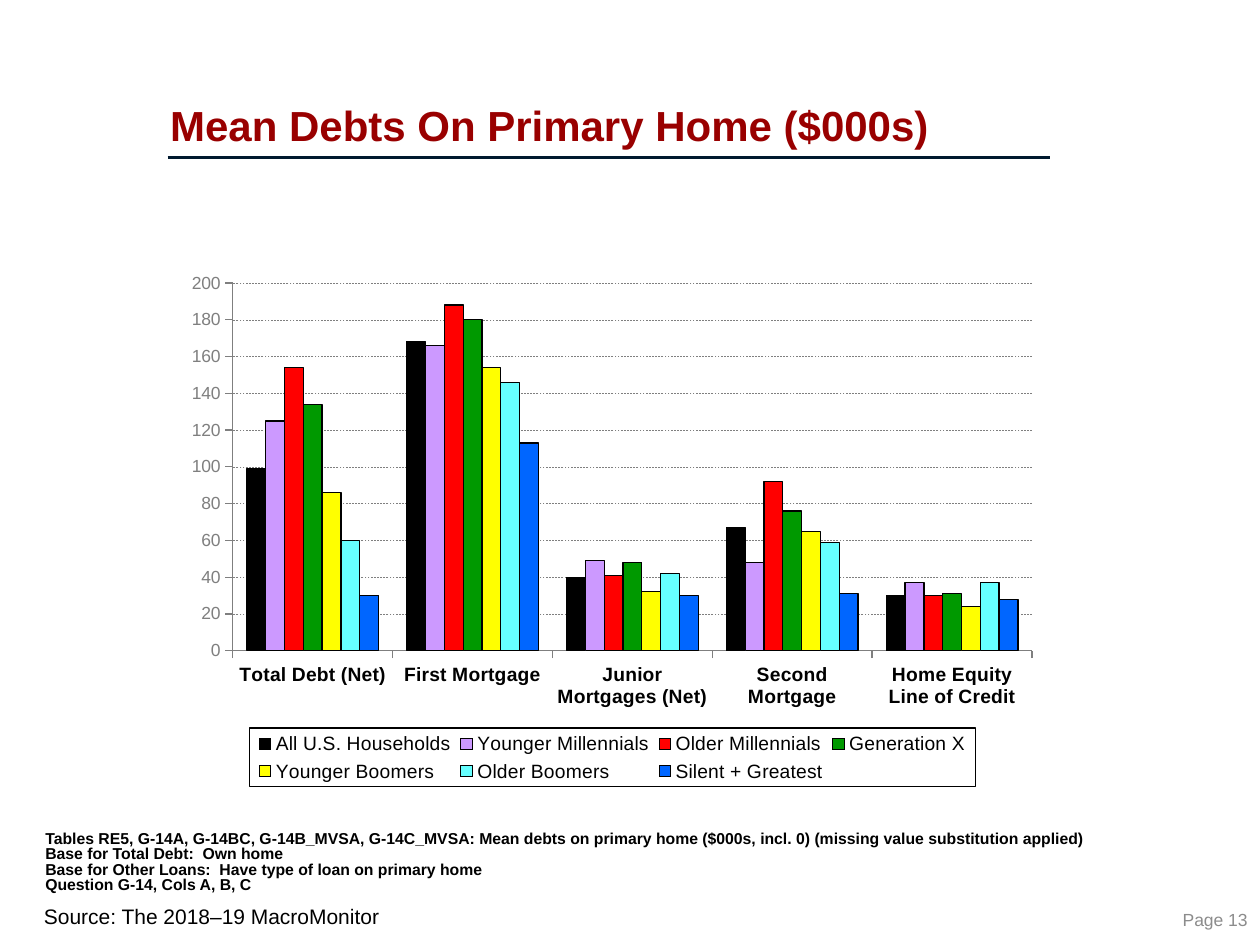
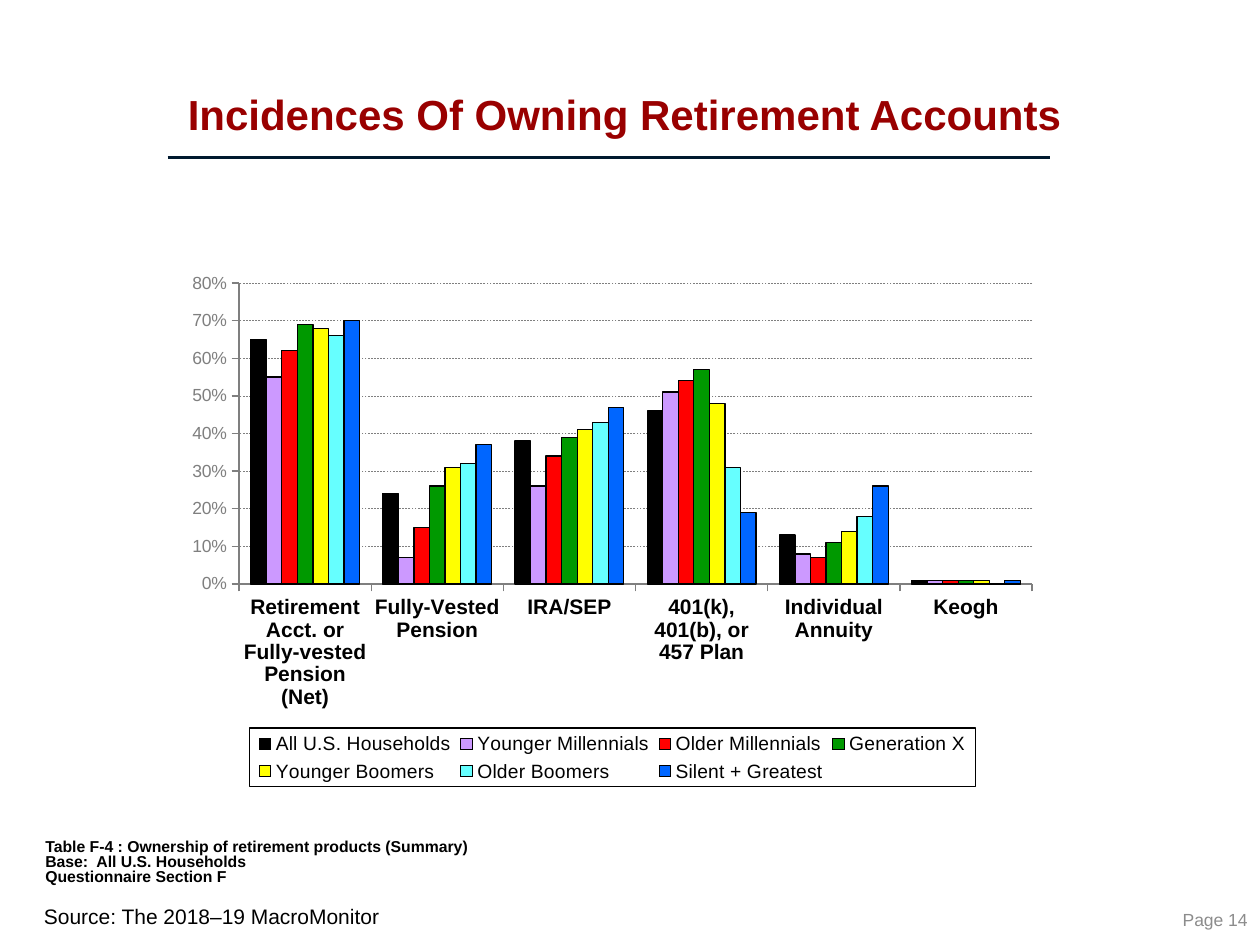
from lxml import etree
from pptx import Presentation
from pptx import util as u
from pptx.chart import data as cd
from pptx.dml.color import RGBColor
from pptx.enum import chart as ch, dml, shapes, text
from pptx.oxml import ns, parse_xml

FONT = "Arial"
INK, GREY, PALE, RED, NAVY = "000000", "7F7F7F", "8C8C8C", "990000", "00192F"
COLS, ROWS = 100, 75
WIDE, HIGH = u.Inches(10), u.Inches(7.5)
GROUPS = {
    "All U.S. Households": "000000",
    "Younger Millennials": "CC99FF",
    "Older Millennials": "FF0000",
    "Generation X": "009900",
    "Younger Boomers": "FFFF00",
    "Older Boomers": "66FFFF",
    "Silent + Greatest": "0066FF",
}
DEBTS = {
    "Total Debt (Net)": (99, 125, 154, 134, 86, 60, 30),
    "First Mortgage": (168, 166, 188, 180, 154, 146, 113),
    "Junior Mortgages (Net)": (40, 49, 41, 48, 32, 42, 30),
    "Second Mortgage": (67, 48, 92, 76, 65, 59, 31),
    "Home Equity Line of Credit": (30, 37, 30, 31, 24, 37, 28),
}
PLANS = {
    "Retirement Acct. or Fully-vested Pension (Net)":
        (0.65, 0.55, 0.62, 0.69, 0.68, 0.66, 0.7),
    "Fully-Vested Pension": (0.24, 0.07, 0.15, 0.26, 0.31, 0.32, 0.37),
    "IRA/SEP": (0.38, 0.26, 0.34, 0.39, 0.41, 0.43, 0.47),
    "401(k), 401(b), or 457 Plan": (0.46, 0.51, 0.54, 0.57, 0.48, 0.31, 0.19),
    "Individual Annuity": (0.13, 0.08, 0.07, 0.11, 0.14, 0.18, 0.26),
    "Keogh": (0.01, 0.01, 0.01, 0.01, 0.01, 0, 0.01),
}


def hue(code):
    """Turn a hex string into a colour."""
    return RGBColor.from_string(code)


def grid(x, y):
    """Turn a column and a row into slide lengths."""
    return int(WIDE * x / COLS), int(HIGH * y / ROWS)


def style(font, size, color, bold=False):
    """Set the face, size, colour and weight of a font."""
    font.name, font.size, font.bold = FONT, u.Pt(size), bold
    font.color.rgb = hue(color)


def stroke(line, color, width):
    """Set the colour and width of a line."""
    line.color.rgb, line.width = hue(color), u.Pt(width)


def label(slide, area, paras, size, color, bold=False, pads=(1, 0.5, 1, 0.5),
          anchor=text.MSO_ANCHOR.TOP, align=text.PP_ALIGN.LEFT, lead=1.0):
    """Add a text box, with one paragraph for each string."""
    box = slide.shapes.add_textbox(*grid(*area[:2]), *grid(*area[2:]))
    frame = box.text_frame
    frame.word_wrap, frame.vertical_anchor = True, anchor
    frame.margin_left, frame.margin_top = grid(*pads[:2])
    frame.margin_right, frame.margin_bottom = grid(*pads[2:])
    frame.text = "\n".join(paras)
    for para in frame.paragraphs:
        para.alignment, para.line_spacing = align, lead
        style(para.font, size, color, bold)


def rule(slide):
    """Draw the line below the title."""
    line = slide.shapes.add_connector(
        shapes.MSO_CONNECTOR.STRAIGHT, *grid(13.3, 12.5), *grid(83.3, 12.5))
    stroke(line.line, NAVY, 2)
    etree.SubElement(line._element.spPr, ns.qn("a:effectLst"))


def place(area, inner=False):
    """Build a manual chart layout from shares of the chart."""
    parts = [("layoutTarget", "inner")] if inner else []
    parts += [("xMode", "edge"), ("yMode", "edge"), *zip("xywh", area)]
    body = "".join(f'<c:{tag} val="{val}"/>' for tag, val in parts)
    return parse_xml(f'<c:layout {ns.nsdecls("c")}><c:manualLayout>{body}'
                     '</c:manualLayout></c:layout>')


def key(chart):
    """Add the framed legend."""
    chart.has_legend = True
    legend = chart.legend
    legend.position = ch.XL_LEGEND_POSITION.BOTTOM
    legend.include_in_layout = False
    style(legend.font, 11, INK)
    node = legend._element
    for old in node.findall(ns.qn("c:layout")):
        node.remove(old)
    node.find(ns.qn("c:legendPos")).addnext(place((0.085, 0.887, 0.83, 0.112)))
    node.find(ns.qn("c:txPr")).addprevious(parse_xml(
        f'<c:spPr {ns.nsdecls("c", "a")}><a:ln w="9525"><a:solidFill>'
        f'<a:srgbClr val="{INK}"/></a:solidFill></a:ln></c:spPr>'))


def scale(chart, top, step, form, size):
    """Style both axes and the grid lines."""
    cat, val = chart.category_axis, chart.value_axis
    for axis in (cat, val):
        axis.major_tick_mark = ch.XL_TICK_MARK.OUTSIDE
        axis.minor_tick_mark = ch.XL_TICK_MARK.NONE
        stroke(axis.format.line, GREY, 0.75)
    style(cat.tick_labels.font, size, INK, True)
    style(val.tick_labels.font, 10, GREY)
    val.minimum_scale, val.maximum_scale, val.major_unit = 0, top, step
    val.tick_labels.number_format = form
    val.tick_labels.number_format_is_linked = False
    val.has_major_gridlines = True
    line = val.major_gridlines.format.line
    stroke(line, GREY, 0.25)
    line.dash_style = dml.MSO_LINE.DASH


def bars(slide, table, plot, top, step, form, size):
    """Add the column chart of all groups."""
    data = cd.CategoryChartData(number_format=form)
    data.categories = list(table)
    for name, vals in zip(GROUPS, zip(*table.values())):
        data.add_series(name, vals)
    chart = slide.shapes.add_chart(
        ch.XL_CHART_TYPE.COLUMN_CLUSTERED, *grid(13.9, 20.8),
        *grid(69.4, 41.7), data).chart
    chart.has_title = False
    style(chart.font, 10, INK)
    cols = chart.plots[0]
    cols.gap_width, cols.overlap, cols.vary_by_categories = 150, 0, False
    for run, color in zip(cols.series, GROUPS.values()):
        run.format.fill.solid()
        run.format.fill.fore_color.rgb = hue(color)
        stroke(run.format.line, INK, 0.75)
    scale(chart, top, step, form, size)
    key(chart)
    area = chart._chartSpace.chart.plotArea
    for old in area.findall(ns.qn("c:layout")):
        area.remove(old)
    area.insert(0, place(plot, True))


def page(deck, num, title, spot, notes):
    """Add a slide with title, rule, notes and footer."""
    slide = deck.slides.add_slide(deck.slide_layouts[6])
    mid = text.MSO_ANCHOR.MIDDLE
    label(slide, (2.5, 71.2, 89.2, 3), ["Source: The 2018–19 MacroMonitor"],
          12, INK)
    rule(slide)
    label(slide, (*spot, 70.1, 7.1), [title], 24, RED, True, (0, 0, 0, 0.5),
          text.MSO_ANCHOR.BOTTOM, lead=0.8)
    label(slide, (3.2, 66, 87, 5), notes, 9, INK, True, (0.4, 1.3, 0, 1.3),
          mid, lead=0.8)
    label(slide, (90, 71.6, 10, 2.7), [f"Page {num}"], 10, PALE, anchor=mid,
          align=text.PP_ALIGN.RIGHT)
    return slide


def main():
    """Build and save the deck."""
    deck = Presentation()
    deck.slide_width, deck.slide_height = WIDE, HIGH
    debt = page(deck, 13, "Mean Debts On Primary Home ($000s)", (13.5, 5.3), [
        "Tables RE5, G-14A, G-14BC, G-14B_MVSA, G-14C_MVSA: Mean debts on "
        "primary home ($000s, incl. 0) (missing value substitution applied)",
        "Base for Total Debt:  Own home",
        "Base for Other Loans:  Have type of loan on primary home",
        "Question G-14, Cols A, B, C"])
    bars(debt, DEBTS, (0.066, 0.04, 0.914, 0.7), 200, 20, "0", 11)
    plan = page(deck, 14, "Incidences Of Owning Retirement Accounts",
                (14.9, 4.4), [
                    "Table F-4 : Ownership of retirement products (Summary)",
                    "Base:  All U.S. Households",
                    "Questionnaire Section F"])
    bars(plan, PLANS, (0.073, 0.04, 0.907, 0.573), 0.8, 0.1, "0%", 12)
    deck.save("out.pptx")


if __name__ == "__main__":
    main()
